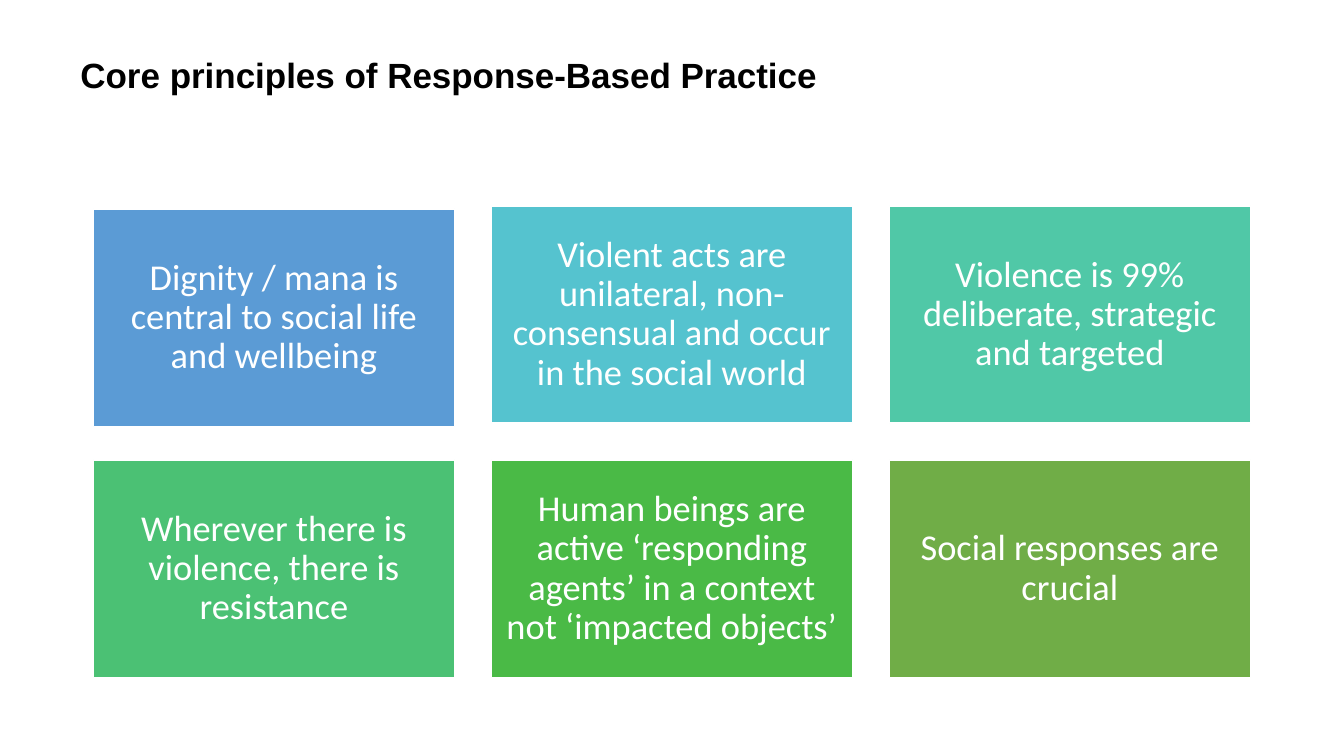
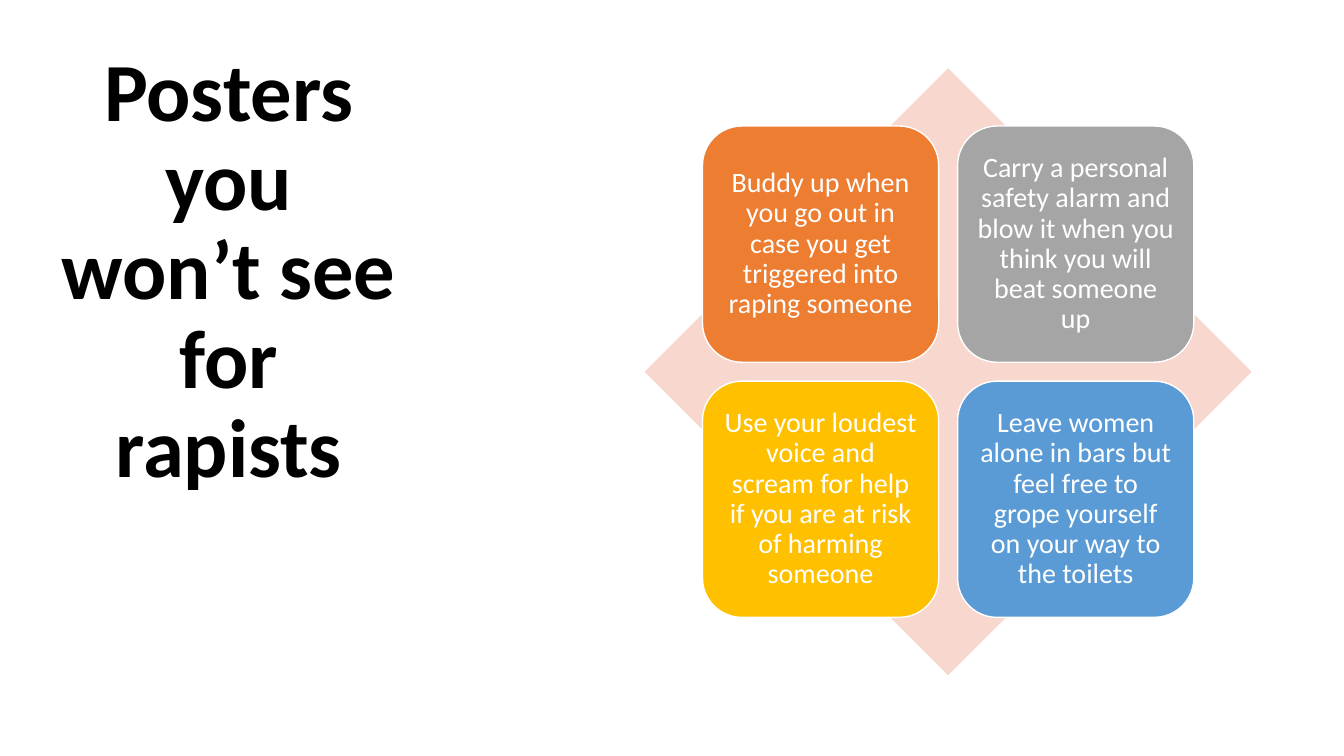
from pptx import Presentation
from pptx import util as u
from pptx.dml.color import RGBColor
from pptx.enum import shapes, text

PX = 9525  # EMU per px, 96 px to the inch

COLORS = {
    "black": "000000",
    "white": "FFFFFF",
    "blue": "5B9BD5",
    "cyan": "55C3CF",
    "teal": "50C8A7",
    "mint": "4BC174",
    "green": "4ABA46",
    "olive": "70AD47",
    "orange": "ED7D31",
    "gray": "A5A5A5",
    "gold": "FFC000",
    "blush": "F8D7CE",
}


def write_text(shape, words, size, color, font="Calibri", bold=False,
               align=text.PP_ALIGN.CENTER, anchor=text.MSO_ANCHOR.MIDDLE):
    frame = shape.text_frame
    frame.word_wrap = True
    frame.auto_size = text.MSO_AUTO_SIZE.NONE
    frame.vertical_anchor = anchor
    paragraph = frame.paragraphs[0]
    paragraph.alignment = align
    paragraph.line_spacing = 0.9
    run = paragraph.add_run()
    run.text = words
    run.font.name = font
    run.font.size = u.Pt(size)
    run.font.bold = bold
    run.font.color.rgb = RGBColor.from_string(COLORS[color])


def add_block(slide, kind, box, fill, line=None, inset=0):
    shape = slide.shapes.add_shape(kind, *(value * PX for value in box))
    shape.shadow.inherit = False
    shape.fill.solid()
    shape.fill.fore_color.rgb = RGBColor.from_string(COLORS[fill])
    if line:
        shape.line.color.rgb = RGBColor.from_string(COLORS[line])
        shape.line.width = u.Pt(1)
    else:
        shape.line.fill.background()
    frame = shape.text_frame
    frame.margin_left = frame.margin_right = inset * PX
    frame.margin_top = frame.margin_bottom = inset * PX
    return shape


presentation = Presentation()
presentation.slide_width = 1280 * PX
presentation.slide_height = 720 * PX
title_only = presentation.slide_layouts[5]

# Slide 1: title
slide = presentation.slides.add_slide(title_only)
title = slide.shapes.title
title.left, title.top, title.width, title.height = (
    value * PX for value in (67, 34, 1145, 119))
title.text_frame.margin_bottom = 45 * PX
write_text(title, "Core principles of Response-Based Practice", 25, "black",
           font="Arial", bold=True, align=text.PP_ALIGN.LEFT)

# Slide 1: principles in three columns
principles = [
    ("blue", "Dignity / mana is central to social life and wellbeing"),
    ("cyan", "Violent acts are unilateral, non-consensual and occur in the social world"),
    ("teal", "Violence is 99% deliberate, strategic and targeted"),
    ("mint", "Wherever there is violence, there is resistance"),
    ("green", "Human beings are active ‘responding agents’ in a context "
              "not ‘impacted objects’"),
    ("olive", "Social responses are crucial"),
]
for index, (fill, words) in enumerate(principles):
    row, column = divmod(index, 3)
    drop = 3 if index == 0 else 0  # the first tile sits slightly lower
    box = (89 + column * 379, 196 + row * 242 + drop, 344, 207)
    tile = add_block(slide, shapes.MSO_SHAPE.RECTANGLE, box, fill, "white", inset=11)
    write_text(tile, words, 26, "white")

# Slide 2: title
slide = presentation.slides.add_slide(title_only)
title = slide.shapes.title
title.left, title.top, title.width, title.height = (
    value * PX for value in (48, 76, 340, 401))
write_text(title, "Posters you won’t see for rapists", 59, "black",
           bold=True, anchor=text.MSO_ANCHOR.BOTTOM)

# Slide 2: diamond behind four posters
add_block(slide, shapes.MSO_SHAPE.DIAMOND, (614, 65, 578, 578), "blush")
posters = [
    ("orange", "Buddy up when you go out in case you get triggered into raping someone"),
    ("gray", "Carry a personal safety alarm and blow it when you think you will "
             "beat someone up"),
    ("gold", "Use your loudest voice and scream for help if you are at risk of "
             "harming someone"),
    ("blue", "Leave women alone in bars but feel free to grope yourself on your way "
             "to the toilets"),
]
for index, (fill, words) in enumerate(posters):
    row, column = divmod(index, 2)
    box = (669 + column * 243, 120 + row * 243, 225, 225)
    card = add_block(slide, shapes.MSO_SHAPE.ROUNDED_RECTANGLE, box, fill, "white", inset=8)
    write_text(card, words, 20, "white")

presentation.save("out.pptx")
